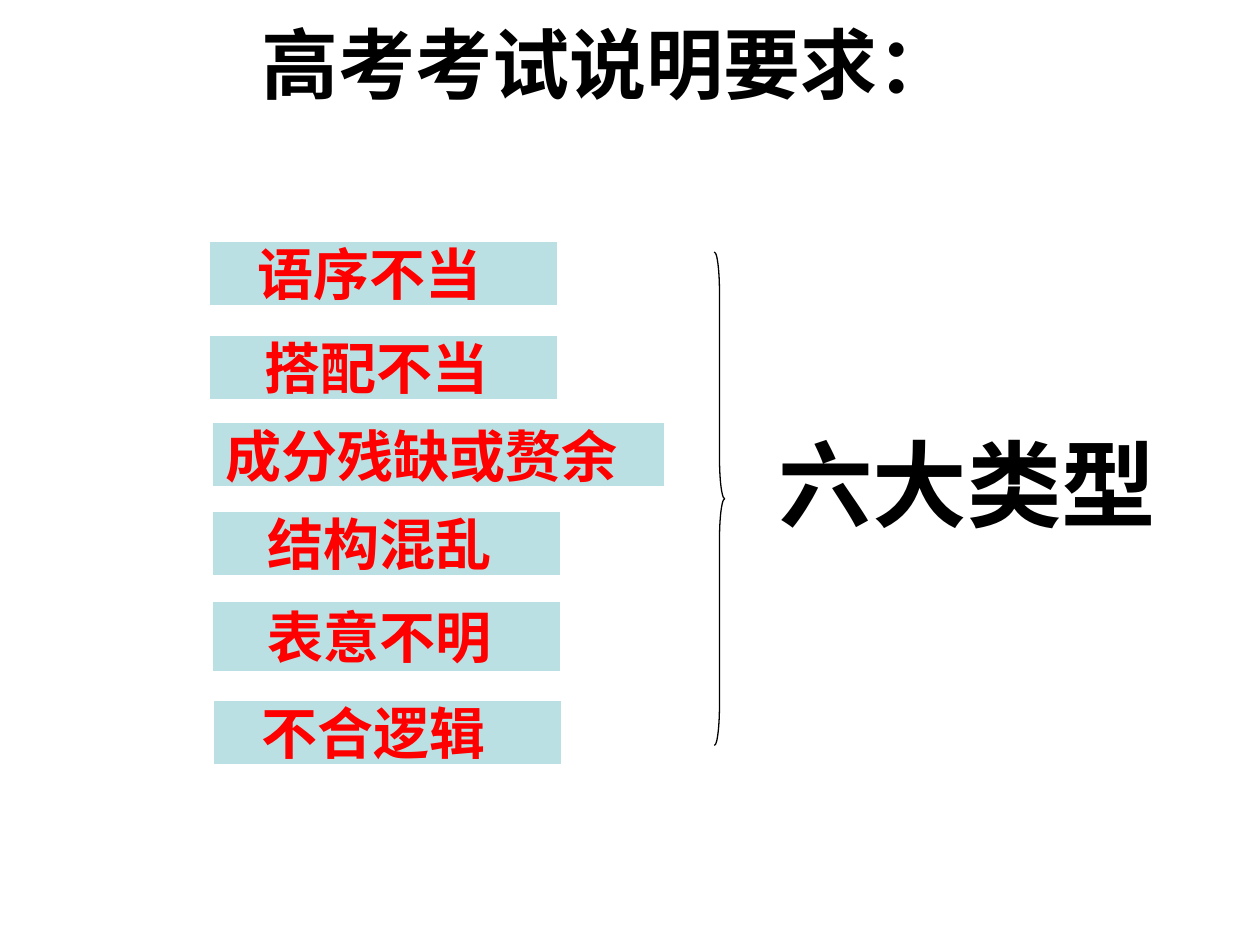
from pptx import Presentation
from pptx.dml.color import RGBColor
from pptx.enum.shapes import MSO_SHAPE
from pptx.enum.text import MSO_ANCHOR, MSO_AUTO_SIZE, PP_ALIGN
from pptx.util import Cm, Pt

BLACK = RGBColor(0x00, 0x00, 0x00)
RED = RGBColor(0xFF, 0x00, 0x00)
PALE_TEAL = RGBColor(0xBB, 0xE0, 0xE3)


def write(tf, text, size, color=BLACK, font="Times New Roman",
          align=PP_ALIGN.LEFT, anchor=MSO_ANCHOR.TOP, wrap=False):
    tf.word_wrap = wrap
    tf.vertical_anchor = anchor
    p = tf.paragraphs[0]
    p.alignment = align
    r = p.add_run()
    r.text = text
    r.font.name = font
    r.font.size = Pt(size)
    r.font.bold = True
    r.font.color.rgb = color


prs = Presentation()
prs.slide_width, prs.slide_height = Cm(25.4), Cm(19.05)
s = prs.slides.add_slide(prs.slide_layouts[5])

title = s.shapes.title
title.left, title.top, title.width, title.height = Cm(1.47), Cm(0), Cm(21.59), Cm(2.54)
write(title.text_frame, "高考考试说明要求：", 44, font="Arial",
      align=PP_ALIGN.CENTER, anchor=MSO_ANCHOR.MIDDLE, wrap=True)

# Text, left, top, width, height, right inset, alignment
error_types = [
    ("语序不当", 4.23, 4.87, 6.99, 1.27, 0.81, PP_ALIGN.CENTER),
    ("搭配不当", 4.23, 6.77, 6.99, 1.27, 0.53, PP_ALIGN.CENTER),
    ("成分残缺或赘余", 4.29, 8.53, 9.1, 1.27, 0.25, PP_ALIGN.LEFT),
    ("结构混乱", 4.29, 10.32, 6.99, 1.27, 0.53, PP_ALIGN.CENTER),
    ("表意不明", 4.29, 12.13, 6.99, 1.4, 0.53, PP_ALIGN.CENTER),
    ("不合逻辑", 4.31, 14.13, 6.99, 1.27, 0.81, PP_ALIGN.CENTER),
]
for text, left, top, width, height, inset, align in error_types:
    sp = s.shapes.add_shape(MSO_SHAPE.ACTION_BUTTON_CUSTOM,
                            Cm(left), Cm(top), Cm(width), Cm(height))
    sp.shadow.inherit = False
    sp.fill.solid()
    sp.fill.fore_color.rgb = PALE_TEAL
    sp.line.fill.background()
    sp.text_frame.margin_right = Cm(inset)
    write(sp.text_frame, text, 32, color=RED, align=align, anchor=MSO_ANCHOR.MIDDLE)

summary = s.shapes.add_textbox(Cm(15.44), Cm(8.46), Cm(9.12), Cm(2.54))
write(summary.text_frame, "六大类型", 54)
summary.text_frame.auto_size = MSO_AUTO_SIZE.SHAPE_TO_FIT_TEXT

brace = s.shapes.add_shape(MSO_SHAPE.RIGHT_BRACE, Cm(14.4), Cm(5.08), Cm(0.21), Cm(9.95))
brace.adjustments[0] = 3.92
brace.adjustments[1] = 0.5
brace.shadow.inherit = False
brace.fill.background()
brace.line.color.rgb = BLACK
brace.line.width = Pt(0.75)

prs.save("out.pptx")
